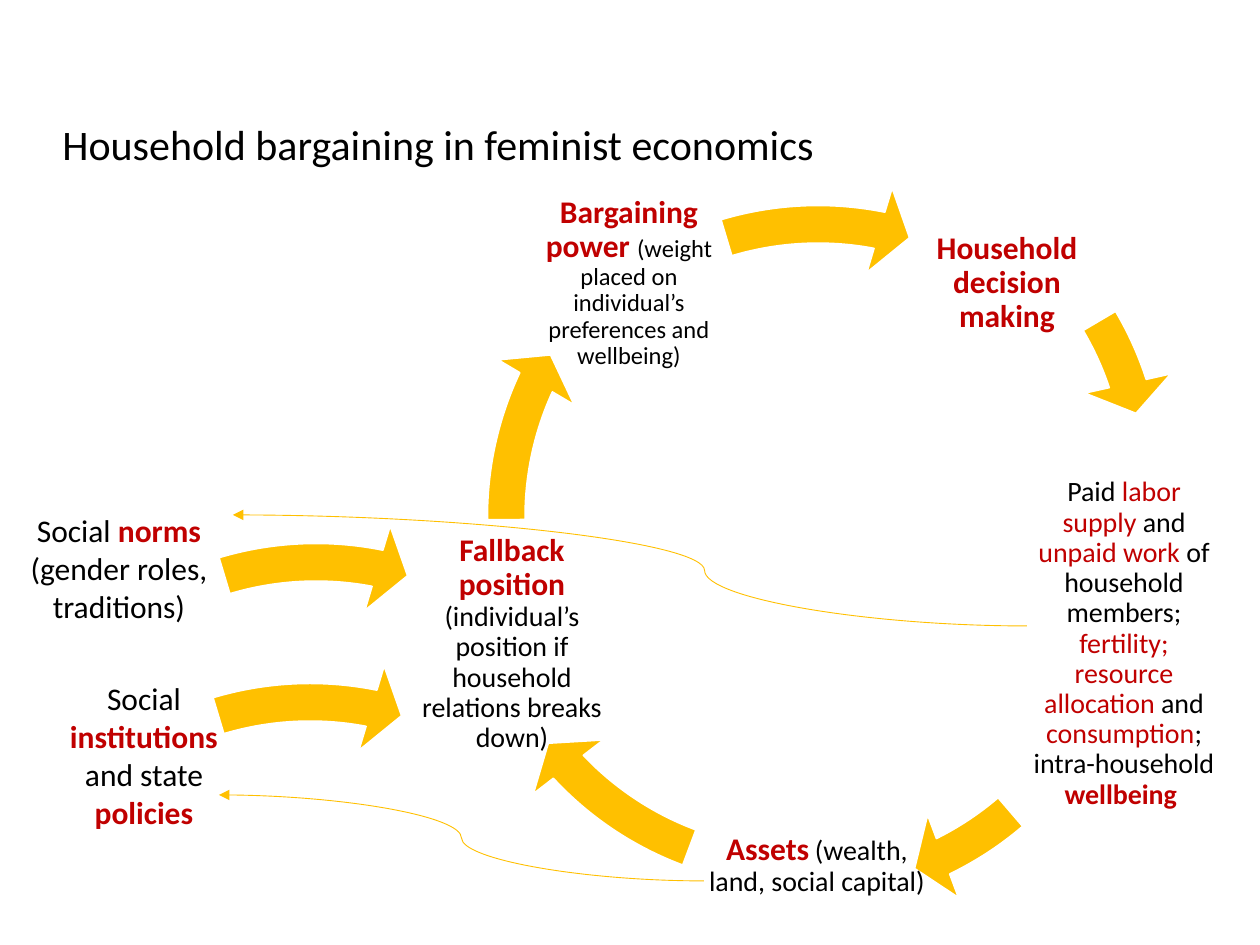
import pptx
import pptx.util
import pptx.dml.color
import pptx.enum.shapes
import pptx.enum.text
import pptx.oxml
import pptx.oxml.ns
from lxml import etree

PX = 914400 // 126
BLACK = pptx.dml.color.RGBColor(0x00, 0x00, 0x00)
RED = pptx.dml.color.RGBColor(0xC0, 0x00, 0x00)
GOLD = pptx.dml.color.RGBColor(0xFF, 0xC0, 0x00)
WHITE = pptx.dml.color.RGBColor(0xFF, 0xFF, 0xFF)
CENTER = pptx.enum.text.PP_ALIGN.CENTER
MIDDLE = pptx.enum.text.MSO_ANCHOR.MIDDLE
TOP = pptx.enum.text.MSO_ANCHOR.TOP
ARROW_SIZE = 726

presentation = pptx.Presentation()
presentation.slide_width = 1260 * PX
presentation.slide_height = 945 * PX
slide = presentation.slides.add_slide(presentation.slide_layouts[6])


def add_label(box, runs, frame_format, paragraph_format):
    """Add a one-paragraph text box; each run is (text, size, colour, bold)."""
    shape = slide.shapes.add_textbox(*(value * PX for value in box))
    frame = shape.text_frame
    frame.word_wrap = True
    for name, value in frame_format.items():
        setattr(frame, name, value)
    paragraph = frame.paragraphs[0]
    for name, value in paragraph_format.items():
        setattr(paragraph, name, value)
    for text, size, color, bold in runs:
        run = paragraph.add_run()
        run.text = text
        run.font.color.rgb = color
        font_format = {"name": "Calibri", "size": pptx.util.Pt(size), "bold": bold}
        for name, value in font_format.items():
            setattr(run.font, name, value)


# Title
add_label((50, 112, 954, 66),
          [("Household bargaining in feminist economics", 24, BLACK, False)],
          {"vertical_anchor": TOP}, {})

# Circular arrows: left, top, angle of the head, angle of the tail
ARROWS = [
    (462, 120, 205.08, 197.65),   # decision making to work
    (440, 207, 38.35, 29.64),     # work to assets
    (438, 186, 82.12, 66.3),      # assets to fallback position
    (462, 154, 122.99, 107.7),    # fallback position to bargaining power
    (455, 180, 168.67, 151.98),   # bargaining power to decision making
    (-47, 518, 168.67, 151.98),   # norms to fallback position
    (-53, 658, 168.67, 151.98),   # institutions to fallback position
]
for left, top, head, tail in ARROWS:
    arrow = slide.shapes.add_shape(
        pptx.enum.shapes.MSO_SHAPE.CIRCULAR_ARROW,
        left * PX, top * PX, ARROW_SIZE * PX, ARROW_SIZE * PX)
    for index, value in enumerate((0.052, 3.356, head, tail, 0.061)):
        arrow.adjustments[index] = value
    arrow.shadow.inherit = False
    arrow.fill.solid()
    arrow.fill.fore_color.rgb = GOLD
    arrow.line.color.rgb = WHITE
    arrow.line.width = pptx.util.Pt(1)

# Stages of the cycle
STAGES = [
    ((910, 186, 194, 194), [("Household decision making", 18, RED, True)]),
    ((1027, 474, 194, 340), [
        ("Paid ", 16, BLACK, False),
        ("labor supply ", 16, RED, False),
        ("and ", 16, BLACK, False),
        ("unpaid work ", 16, RED, False),
        ("of household members; ", 16, BLACK, False),
        ("fertility; resource allocation ", 16, RED, False),
        ("and ", 16, BLACK, False),
        ("consumption", 16, RED, False),
        ("; intra-household ", 16, BLACK, False),
        ("wellbeing ", 16, RED, True)]),
    ((704, 757, 226, 217), [
        ("Assets", 18, RED, True),
        (" ", 14, BLACK, False),
        ("(wealth, land, social capital)", 16, BLACK, False)]),
    ((415, 547, 194, 194), [
        ("Fallback position ", 18, RED, True),
        ("(individual’s position if household relations breaks down)", 16, BLACK, False)]),
    ((532, 186, 194, 194), [
        ("Bargaining power ", 18, RED, True),
        ("(weight placed on individual’s preferences and wellbeing)", 14, BLACK, False)]),
]
stage_frame = {"vertical_anchor": MIDDLE}
for side in ("left", "top", "right", "bottom"):
    stage_frame["margin_" + side] = 3 * PX
for box, runs in STAGES:
    add_label(box, runs, stage_frame, {"alignment": CENTER, "line_spacing": 0.9})

# Outside influences
INFLUENCES = [
    ((33, 673, 222, 165), [
        ("Social ", 18, BLACK, False),
        ("institutions", 18, RED, True),
        (" and state ", 18, BLACK, False),
        ("policies", 18, RED, True)]),
    ((8, 505, 222, 127), [
        ("Social ", 18, BLACK, False),
        ("norms ", 18, RED, True),
        ("(gender roles, traditions)", 18, BLACK, False)]),
]
influence_frame = {"vertical_anchor": TOP,
                   "auto_size": pptx.enum.text.MSO_AUTO_SIZE.SHAPE_TO_FIT_TEXT}
for box, runs in INFLUENCES:
    add_label(box, runs, influence_frame, {"alignment": CENTER})

# Feedback curves: start, end, position of the bend in 1/100000
FEEDBACK = [
    ((1027, 626), (233, 515), 40600),   # work to norms
    ((704, 881), (219, 795), 50000),    # assets to institutions
]
for start, end, bend in FEEDBACK:
    curve = slide.shapes.add_connector(
        pptx.enum.shapes.MSO_CONNECTOR.CURVE,
        *(value * PX for value in start + end))
    curve.line.color.rgb = GOLD
    curve.line.width = pptx.util.Pt(0.5)
    properties = curve.line._get_or_add_ln()
    etree.SubElement(properties, pptx.oxml.ns.qn("a:tailEnd"), type="triangle")
    shape_properties = curve._element.spPr
    etree.SubElement(shape_properties, pptx.oxml.ns.qn("a:effectLst"))
    guides = shape_properties.find(
        pptx.oxml.ns.qn("a:prstGeom")).find(pptx.oxml.ns.qn("a:avLst"))
    etree.SubElement(guides, pptx.oxml.ns.qn("a:gd"), name="adj1", fmla=f"val {bend}")

presentation.save("out.pptx")
